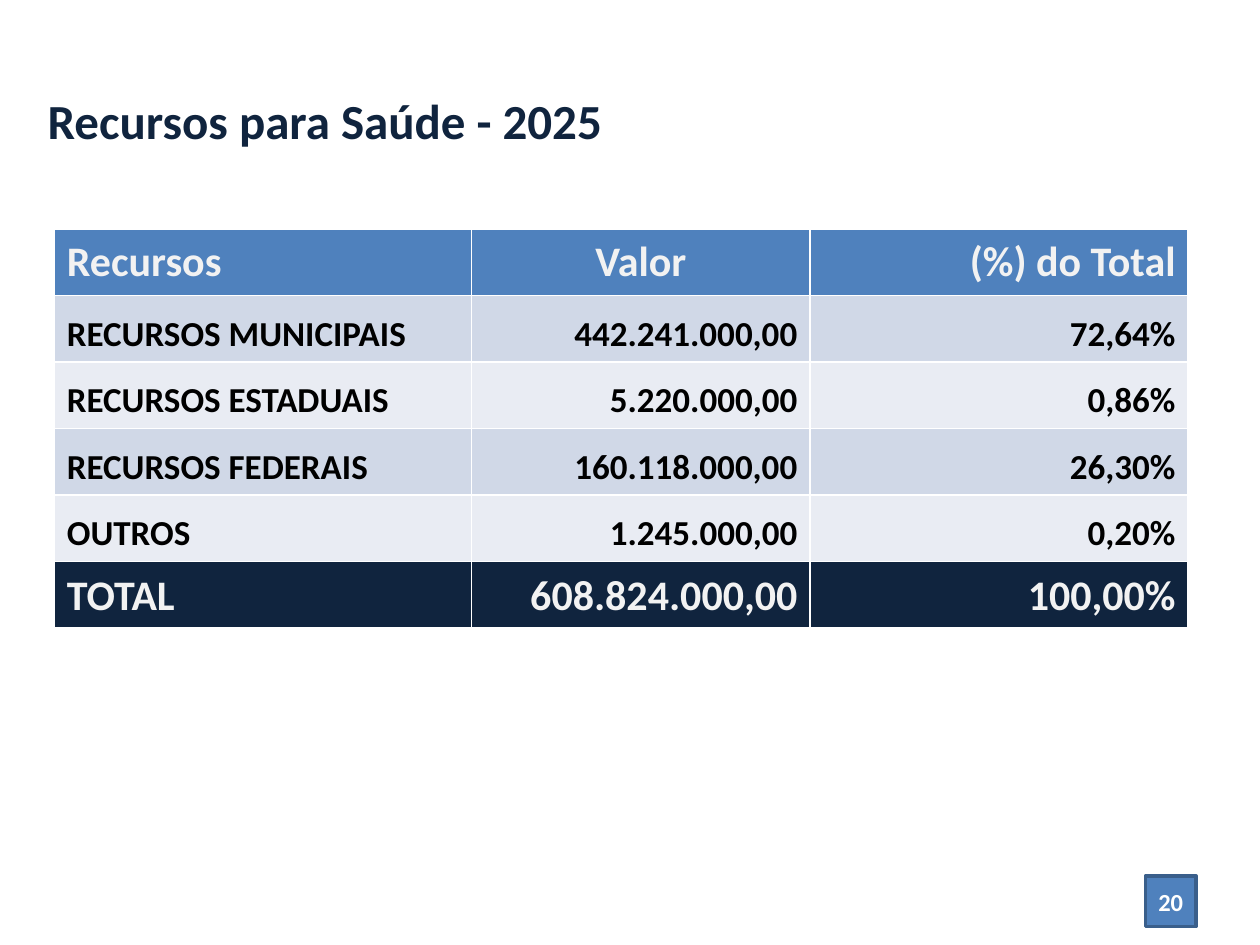
import pptx
import pptx.util
import pptx.dml.color
import pptx.enum.shapes
import pptx.enum.text

Pt = pptx.util.Pt
RGBColor = pptx.dml.color.RGBColor
ALIGN = pptx.enum.text.PP_ALIGN
ANCHOR = pptx.enum.text.MSO_ANCHOR

NAVY = RGBColor(0x10, 0x24, 0x3E)
BLUE = RGBColor(0x4F, 0x81, 0xBD)
DARK_BLUE = RGBColor(0x3A, 0x5F, 0x8B)
BAND_DARK = RGBColor(0xD0, 0xD8, 0xE7)
BAND_LIGHT = RGBColor(0xE9, 0xEC, 0xF3)
OFF_WHITE = RGBColor(0xF2, 0xF2, 0xF2)
WHITE = RGBColor(0xFF, 0xFF, 0xFF)
BLACK = RGBColor(0, 0, 0)

HEADER = ("Recursos", "Valor", "(%) do Total")
RESOURCES = [
    ("RECURSOS MUNICIPAIS", "442.241.000,00", "72,64%"),
    ("RECURSOS ESTADUAIS", "5.220.000,00", "0,86%"),
    ("RECURSOS FEDERAIS", "160.118.000,00", "26,30%"),
    ("OUTROS", "1.245.000,00", "0,20%"),
]
TOTAL = ("TOTAL", "608.824.000,00", "100,00%")
COLUMN_WIDTHS = (238.5, 193.5, 216)
ROW_HEIGHT = 38


def write(frame, text, size, color, align):
    paragraph = frame.paragraphs[0]
    paragraph.text = text
    paragraph.alignment = align
    font = paragraph.font
    font.name, font.size, font.bold = "Calibri", Pt(size), True
    font.color.rgb = color


def add_title(slide, text):
    title = slide.shapes.title
    title.left, title.top, title.width, title.height = Pt(20), Pt(37.5), Pt(533), Pt(62.5)
    title.text_frame.vertical_anchor = ANCHOR.MIDDLE
    write(title.text_frame, text, 28, NAVY, ALIGN.LEFT)


def fill_row(row, texts, size, color, fill, anchor, aligns):
    row.height = Pt(ROW_HEIGHT)
    for cell, text, align in zip(row.cells, texts, aligns):
        cell.fill.solid()
        cell.fill.fore_color.rgb = fill
        cell.vertical_anchor = anchor
        write(cell.text_frame, text, size, color, align)


def add_resource_table(slide):
    row_count = len(RESOURCES) + 2
    table = slide.shapes.add_table(
        row_count, len(HEADER), Pt(31), Pt(131),
        Pt(sum(COLUMN_WIDTHS)), Pt(ROW_HEIGHT * row_count)).table
    for column, width in zip(table.columns, COLUMN_WIDTHS):
        column.width = Pt(width)

    # The default table style supplies the white rules, thicker below the header
    header_aligns = (ALIGN.LEFT, ALIGN.CENTER, ALIGN.RIGHT)
    value_aligns = (ALIGN.LEFT, ALIGN.RIGHT, ALIGN.RIGHT)
    fill_row(table.rows[0], HEADER, 24, OFF_WHITE, BLUE, ANCHOR.MIDDLE, header_aligns)
    for index, texts in enumerate(RESOURCES, start=1):
        band = BAND_DARK if index % 2 else BAND_LIGHT
        fill_row(table.rows[index], texts, 20, BLACK, band, ANCHOR.BOTTOM, value_aligns)
    fill_row(table.rows[row_count - 1], TOTAL, 24, OFF_WHITE, NAVY, ANCHOR.BOTTOM, value_aligns)


def add_page_number(slide, number):
    box = slide.shapes.add_shape(
        pptx.enum.shapes.MSO_SHAPE.RECTANGLE, Pt(654.5), Pt(500.5), Pt(29), Pt(29))
    box.shadow.inherit = False
    box.fill.solid()
    box.fill.fore_color.rgb = BLUE
    box.line.color.rgb = DARK_BLUE
    box.line.width = Pt(2)
    frame = box.text_frame
    frame.margin_left = frame.margin_right = 0
    frame.vertical_anchor = ANCHOR.MIDDLE
    write(frame, number, 14, WHITE, ALIGN.CENTER)


def main():
    deck = pptx.Presentation()
    deck.slide_width, deck.slide_height = Pt(720), Pt(540)
    slide = deck.slides.add_slide(deck.slide_layouts.get_by_name("Title Only"))
    add_title(slide, "Recursos para Saúde - 2025")
    add_resource_table(slide)
    add_page_number(slide, "20")
    deck.save("out.pptx")


if __name__ == "__main__":
    main()
